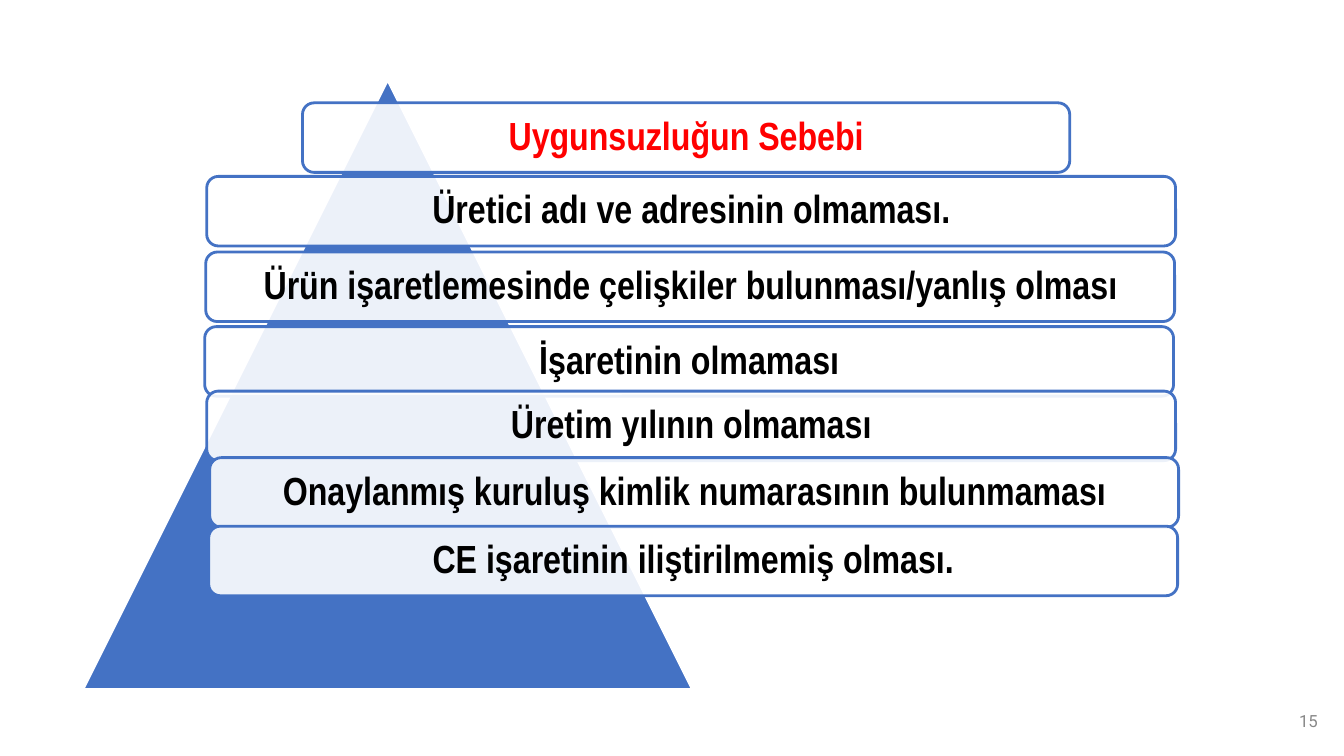
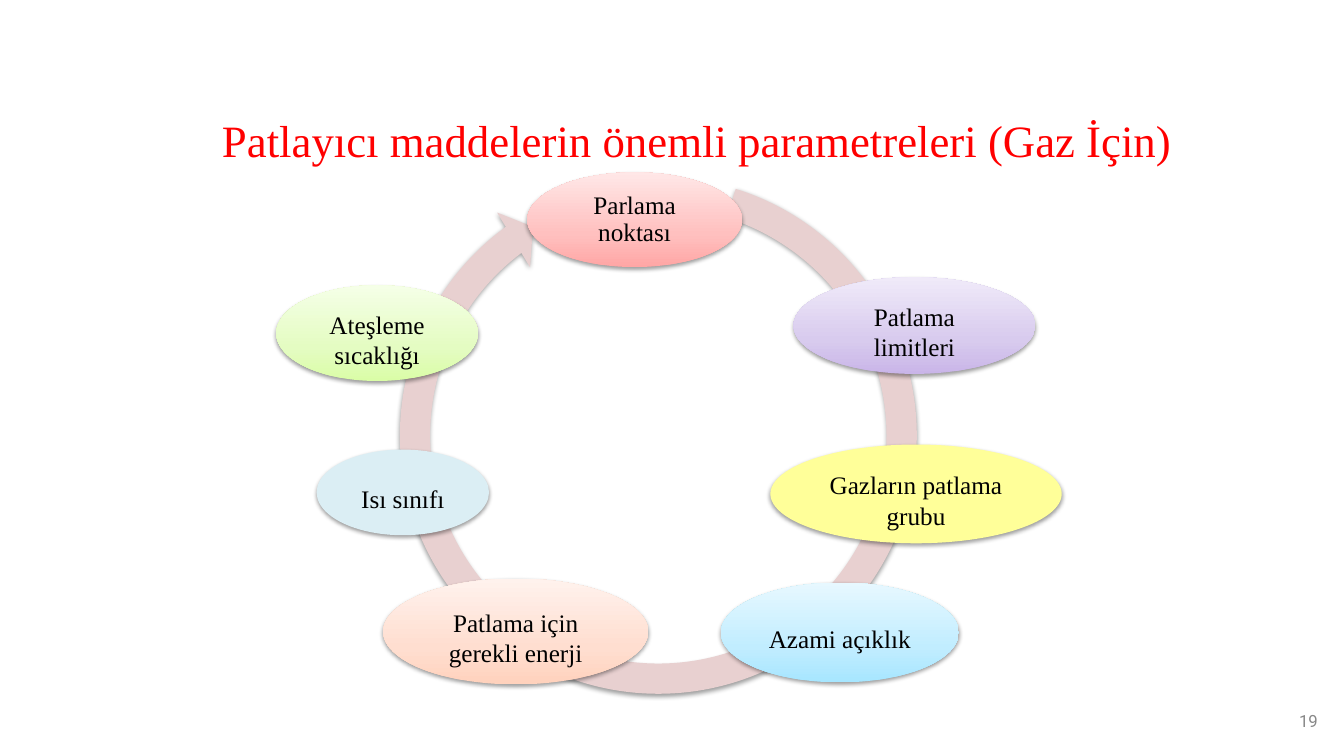
from lxml import etree
from pptx import Presentation
from pptx.dml.color import RGBColor
from pptx.enum.shapes import MSO_SHAPE
from pptx.enum.text import MSO_ANCHOR, PP_ALIGN
from pptx.oxml.ns import qn
from pptx.util import Inches, Pt

TRIANGLE = MSO_SHAPE.ISOSCELES_TRIANGLE
ROUNDED_BAR = MSO_SHAPE.ROUNDED_RECTANGLE
ELLIPSE = MSO_SHAPE.OVAL
CIRCULAR_ARROW = MSO_SHAPE.CIRCULAR_ARROW
MIDDLE, TOP = MSO_ANCHOR.MIDDLE, MSO_ANCHOR.TOP
CENTER, RIGHT = PP_ALIGN.CENTER, PP_ALIGN.RIGHT

COLORS = {
    "white": "FFFFFF",
    "text": "000000",
    "heading": "FF0000",
    "page_number": "888888",
    "blue": "4472C4",
    "cycle": "E8D0D0",
}
SERIF, NARROW, PAGE_FONT = "Times New Roman", "Arial Narrow", "Roboto"

BAR_HEIGHT = 0.69
# text, left, top, width, color
REASONS = [
    ("Uygunsuzluğun Sebebi", 3, 1.02, 7.61, "heading"),
    ("Üretici adı ve adresinin olmaması.", 2.05, 1.75, 9.61, "text"),
    ("Ürün işaretlemesinde çelişkiler bulunması/yanlış olması", 2.04, 2.5, 9.61, "text"),
    ("İşaretinin olmaması", 2.03, 3.24, 9.61, "text"),
    ("Üretim yılının olmaması", 2.05, 3.88, 9.61, "text"),
    ("Onaylanmış kuruluş kimlik numarasının bulunmaması", 2.08, 4.54, 9.61, "text"),
    ("CE işaretinin iliştirilmemiş olması.", 2.07, 5.22, 9.61, "text"),
]

GRADIENT_POSITIONS = (0, 35, 100)
# text, box, one solid color or three gradient colors from the bottom up
PARAMETERS = [
    ("Parlama noktası", (5.23, 1.71, 2.13, 0.94), ("FFA6A5", "FFC0BF", "FFE7E7")),
    ("Gazların patlama grubu", (7.64, 4.41, 2.89, 0.98), ("FFFF99",)),
    ("Patlama limitleri", (7.87, 2.75, 2.4, 0.96), ("C9B5E8", "D8CBEE", "F0EAF9")),
    ("Azami açıklık", (7.15, 5.78, 2.36, 0.99), ("A7E6FF", "C1EDFF", "E7F8FF")),
    ("Patlama için gerekli enerji", (3.8, 5.74, 2.63, 1.05), ("FFD2BD", "FFDED0", "FFF2ED")),
    ("Isı sınıfı", (3.14, 4.46, 1.71, 0.85), ("DBEEF4",)),
    ("Ateşleme sıcaklığı", (2.74, 2.83, 2, 0.95), ("DAFDA7", "E4FCC2", "F5FFE7")),
]


def rgb(color):
    return RGBColor.from_string(COLORS.get(color, color))


def add_element(parent, tag, **attributes):
    element = etree.SubElement(parent, qn(tag))
    for name, value in attributes.items():
        element.set(name, str(value))
    return element


def set_text(shape, text, font, size, color, bold=False, align=CENTER,
             anchor=MIDDLE, insets=(0.1, 0.05, 0.1, 0.05), line_spacing=None):
    """Write one paragraph; insets run left, top, right, bottom."""
    frame = shape.text_frame
    frame.word_wrap = True
    frame.vertical_anchor = anchor
    (frame.margin_left, frame.margin_top,
     frame.margin_right, frame.margin_bottom) = map(Inches, insets)
    frame.text = text
    paragraph = frame.paragraphs[0]
    paragraph.alignment = align
    if line_spacing:
        paragraph.line_spacing = line_spacing
    run_font = paragraph.runs[0].font
    run_font.name, run_font.size, run_font.bold = font, Pt(size), bold
    run_font.color.rgb = rgb(color)


def add_text(slide, box, text, font, size, color, **options):
    shape = slide.shapes.add_textbox(*map(Inches, box))
    set_text(shape, text, font, size, color, **options)


def add_shape(slide, kind, box, fill, line=None):
    shape = slide.shapes.add_shape(kind, *map(Inches, box))
    shape.shadow.inherit = False
    shape.fill.solid()
    shape.fill.fore_color.rgb = rgb(fill)
    if line:
        shape.line.color.rgb = rgb(line)
        shape.line.width = Pt(2)
    else:
        shape.line.fill.background()
    return shape


def set_opacity(shape, percent):
    color = shape.element.spPr.find(qn("a:solidFill"))[0]
    add_element(color, "a:alpha", val=percent * 1000)


def set_gradient(shape, colors):
    shape.fill.gradient()
    shape.fill.gradient_angle = 90
    stops = shape.element.spPr.find(qn("a:gradFill")).find(qn("a:gsLst"))
    for stop in list(stops):
        stops.remove(stop)
    for position, color in zip(GRADIENT_POSITIONS, colors):
        stop = add_element(stops, "a:gs", pos=position * 1000)
        add_element(stop, "a:srgbClr", val=color)


def add_soft_shadow(shape):
    effects = shape.element.spPr.find(qn("a:effectLst"))
    shadow = add_element(effects, "a:outerShdw", blurRad=Pt(3.1), dist=Pt(1.6),
                         dir=90 * 60000, rotWithShape=0)
    color = add_element(shadow, "a:srgbClr", val=COLORS["text"])
    add_element(color, "a:alpha", val=38000)


def add_slide(presentation, number):
    """Add a blank slide with its page number."""
    slide = presentation.slides.add_slide(presentation.slide_layouts[6])
    add_text(slide, (10.17, 6.95, 3, 0.4), str(number), PAGE_FONT, 12,
             "page_number", align=RIGHT)
    return slide


def add_reason_bar(slide, text, left, top, width, color):
    bar = add_shape(slide, ROUNDED_BAR, (left, top, width, BAR_HEIGHT), "white", "blue")
    set_opacity(bar, 90)
    set_text(bar, text, NARROW, 28, color, bold=True, line_spacing=0.9)


def add_cycle_arrow(slide):
    arrow = add_shape(slide, CIRCULAR_ARROW, (3.8, 1.59, 5.46, 5.46), "cycle")
    degree = 0.6
    adjustments = (0.055, 5.51 * degree, 233.5 * degree, 287.42 * degree, 0.058)
    for index, value in enumerate(adjustments):
        arrow.adjustments[index] = value
    add_soft_shadow(arrow)


def add_parameter(slide, text, box, colors, first):
    ellipse = add_shape(slide, ELLIPSE, box, colors[0])
    if len(colors) > 1:
        set_gradient(ellipse, colors)
    add_soft_shadow(ellipse)
    if first:
        set_text(ellipse, text, SERIF, 18, "text",
                 insets=(0.07, 0.07, 0.07, 0.07), line_spacing=0.9)
    else:
        set_text(ellipse, text, SERIF, 18, "text", insets=(0.07, 0.12, 0.07, 0))


def build_reasons_slide(presentation):
    slide = add_slide(presentation, 15)
    add_shape(slide, TRIANGLE, (0.82, 0.79, 6.05, 6.05), "blue", "white")
    for reason in REASONS:
        add_reason_bar(slide, *reason)


def build_parameters_slide(presentation):
    slide = add_slide(presentation, 19)
    add_text(slide, (0.67, 1.07, 12.49, 0.65),
             "Patlayıcı maddelerin önemli parametreleri (Gaz İçin)",
             SERIF, 32, "heading", anchor=TOP)
    add_cycle_arrow(slide)
    for index, parameter in enumerate(PARAMETERS):
        add_parameter(slide, *parameter, first=index == 0)


def main():
    presentation = Presentation()
    presentation.slide_width = Inches(13.33)
    presentation.slide_height = Inches(7.5)
    build_reasons_slide(presentation)
    build_parameters_slide(presentation)
    presentation.save("out.pptx")


if __name__ == "__main__":
    main()
